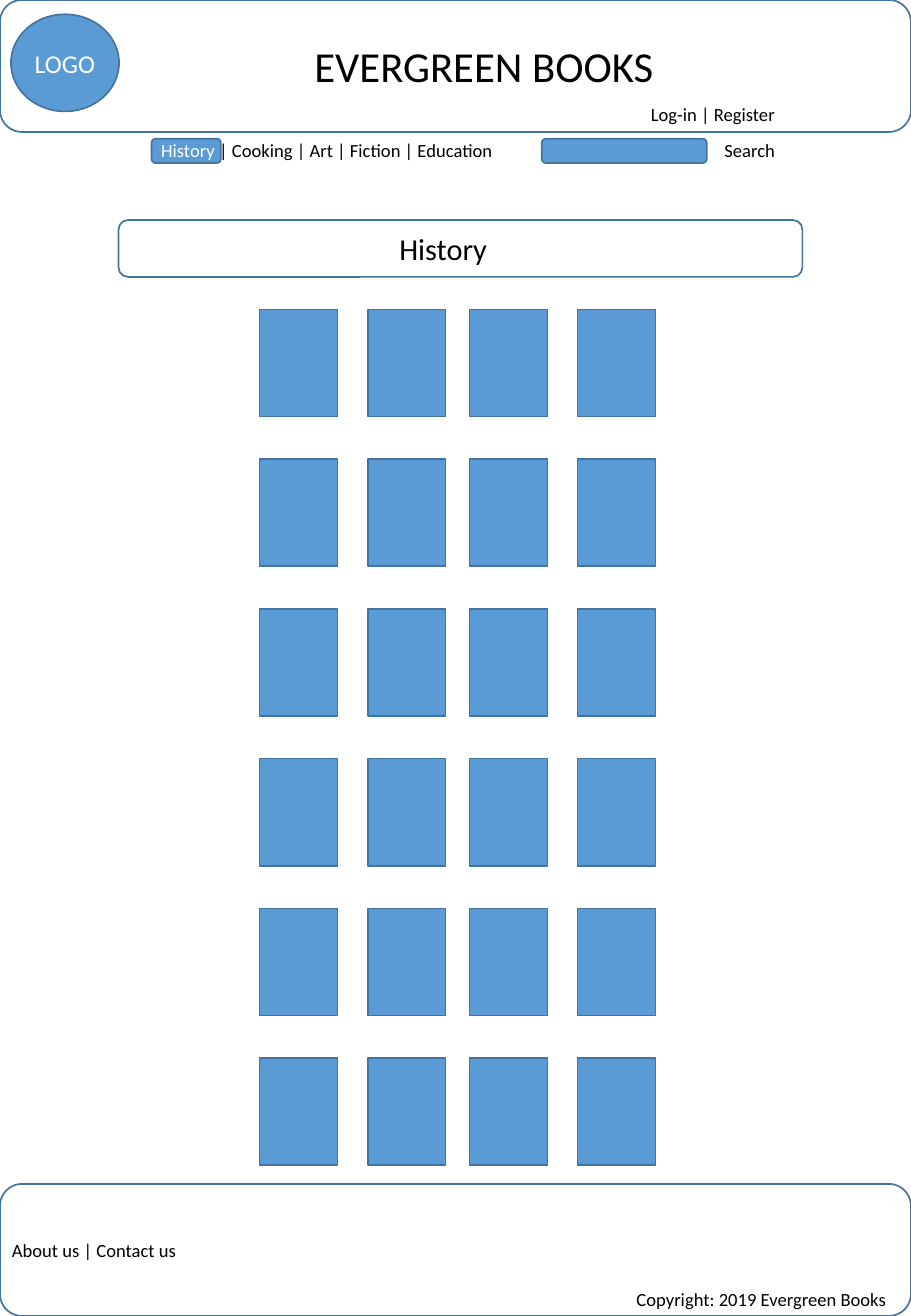
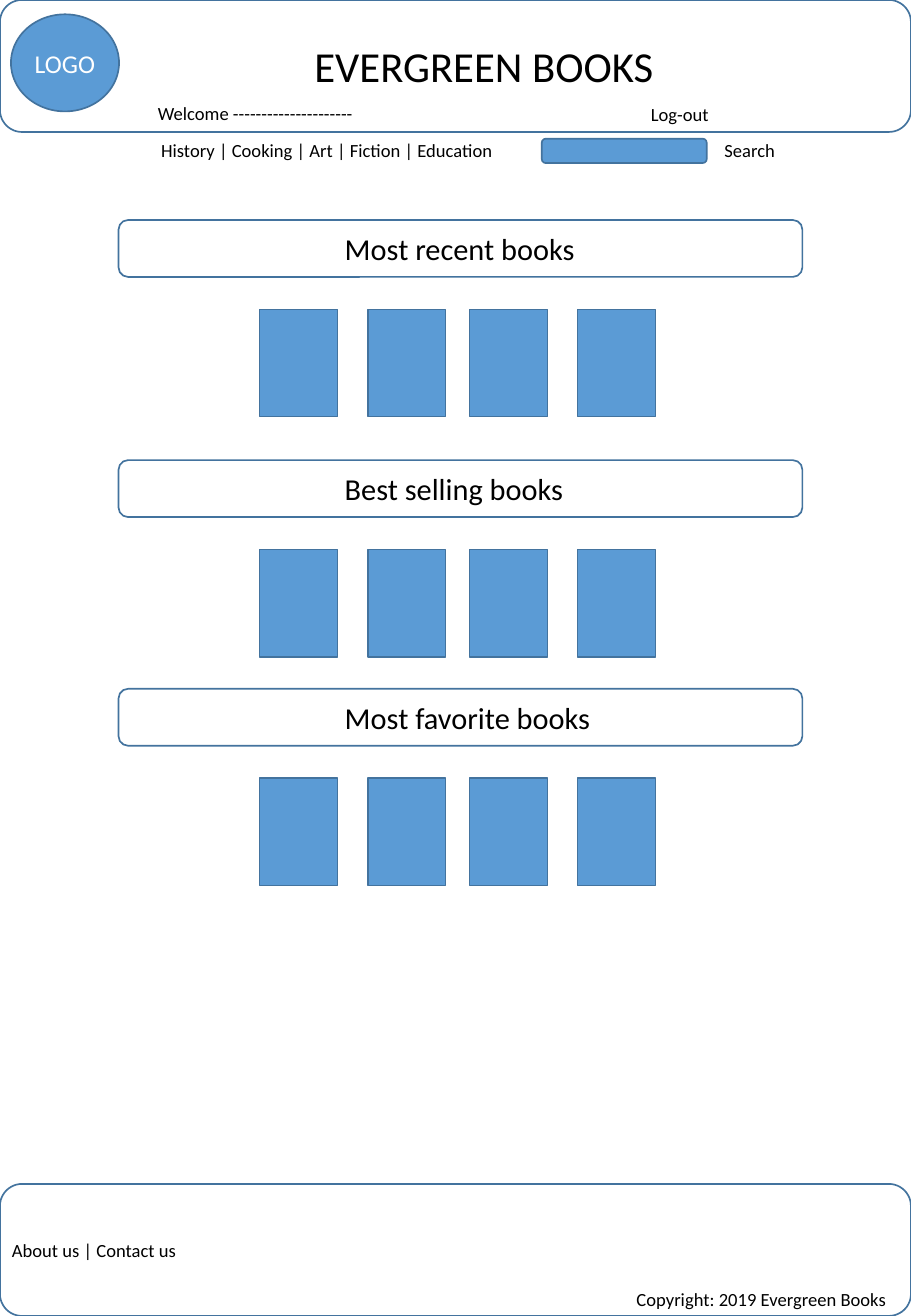
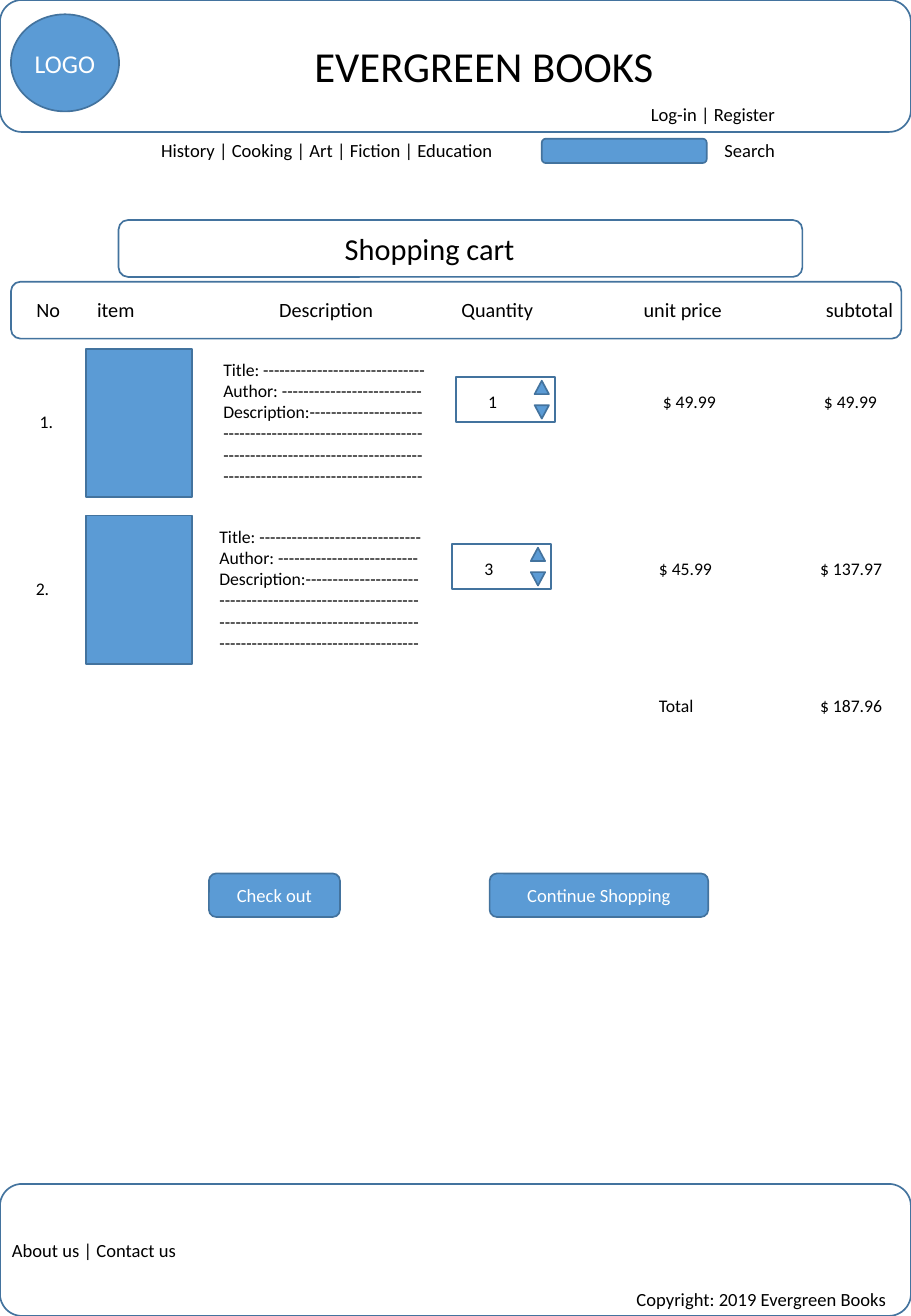
from lxml import etree
from pptx import Presentation
from pptx.dml.color import RGBColor
from pptx.enum.shapes import MSO_SHAPE as SHAPE
from pptx.enum.text import MSO_ANCHOR as ANCHOR, MSO_AUTO_SIZE as AUTO, PP_ALIGN as ALIGN
from pptx.oxml.ns import qn
from pptx.util import Cm, Pt

COLORS = {"blue": "5B9BD5", "edge": "43739E", "black": "000000", "white": "FFFFFF"}
FONT = "Calibri"
WIDTH, HEIGHT = 19.05, 27.51
BAND_H = 2.76

LABEL = {"word_wrap": False, "auto_size": AUTO.SHAPE_TO_FIT_TEXT, "vertical_anchor": ANCHOR.TOP}
BUTTON = {"word_wrap": True, "vertical_anchor": ANCHOR.MIDDLE,
          "margin_left": Cm(0.1), "margin_right": Cm(0.1),
          "margin_top": Cm(0.05), "margin_bottom": Cm(0.05)}

CATEGORIES = ["History", " | Cooking | Art | Fiction | Education"]
COVER_X = [5.43, 7.69, 9.82, 12.08]
COVER_PITCH = 3.13
HEADING_TO_COVERS = 1.87

CART_COLUMNS = ["No", "item", "Description", "Quantity", "unit price", "subtotal"]
CART_TABS = [1.27, 5.08, 8.89, 12.7, 16.51]
CART_TOP, CART_PITCH = 7.29, 3.49
CART_ITEMS = [
    {"no": "1.", "shift": 0, "quantity": "1", "price": "$ 49.99", "subtotal": "$ 49.99", "w": 1.65},
    {"no": "2.", "shift": -0.08, "quantity": "3", "price": "$ 45.99", "subtotal": "$ 137.97", "w": 1.83},
]
BOOK_LINES = [
    "Title: ------------------------------",
    "Author: --------------------------",
    "Description:---------------------",
] + ["-------------------------------------"] * 3


def apply(target, values):
    for name, value in values.items():
        setattr(target, name, value)


def place(sp, x, y, w, h):
    apply(sp, {"left": Cm(x), "top": Cm(y), "width": Cm(w), "height": Cm(h)})


def add_run(p, text, size, color):
    r = p.add_run()
    r.text = text
    apply(r.font, {"name": FONT, "size": Pt(size)})
    r.font.color.rgb = RGBColor.from_string(COLORS[color])


def write(tf, lines, size, color="black", align=ALIGN.LEFT):
    for i, line in enumerate(lines):
        p = tf.add_paragraph() if i else tf.paragraphs[0]
        p.alignment = align
        add_run(p, line, size, color)


def add_label(s, x, y, w, h, lines, size):
    sp = s.shapes.add_textbox(Cm(x), Cm(y), Cm(w), Cm(h))
    apply(sp.text_frame, LABEL)
    write(sp.text_frame, lines, size)
    return sp


def add_box(s, kind, x, y, w, h, filled=True):
    sp = s.shapes.add_shape(kind, Cm(x), Cm(y), Cm(w), Cm(h))
    sp.shadow.inherit = False
    if filled:
        sp.fill.solid()
        sp.fill.fore_color.rgb = RGBColor.from_string(COLORS["blue"])
    else:
        sp.fill.background()
    sp.line.color.rgb = RGBColor.from_string(COLORS["edge"])
    sp.line.width = Pt(1)
    return sp


def add_button(s, kind, x, y, w, h, text, size):
    tf = add_box(s, kind, x, y, w, h).text_frame
    apply(tf, BUTTON)
    write(tf, [text], size, "white", ALIGN.CENTER)


def add_title(s, text):
    sp = s.shapes.title
    place(sp, 6.32, 0.71, 7.67, 1.35)
    apply(sp.text_frame, LABEL)
    write(sp.text_frame, [text], 25.3)


def add_navigation(s, selected):
    if selected:
        add_box(s, SHAPE.ROUNDED_RECTANGLE, 3.17, 2.9, 1.45, 0.51)
    sp = s.shapes.add_textbox(Cm(3.12), Cm(2.77), Cm(7.82), Cm(0.74))
    apply(sp.text_frame, LABEL)
    first, rest = CATEGORIES
    p = sp.text_frame.paragraphs[0]
    add_run(p, first, 11, "white" if selected else "black")
    add_run(p, rest, 11, "black")
    add_box(s, SHAPE.ROUNDED_RECTANGLE, 11.33, 2.9, 3.45, 0.51)
    add_label(s, 14.9, 2.79, 1.59, 0.74, ["Search"], 11)


def add_page(prs, account="Log-in | Register", account_w=3.12, selected=False):
    s = prs.slides.add_slide(prs.slide_layouts[5])
    for y in (0, HEIGHT - BAND_H):
        add_box(s, SHAPE.ROUNDED_RECTANGLE, 0, y, WIDTH, BAND_H, filled=False)
    add_button(s, SHAPE.OVAL, 0.23, 0.3, 2.26, 2.03, "LOGO", 15.2)
    add_title(s, "EVERGREEN BOOKS")
    add_label(s, 13.36, 2.03, account_w, 0.74, [account], 11)
    add_navigation(s, selected)
    add_label(s, 13.06, 26.8, 5.79, 0.74, ["Copyright: 2019 Evergreen Books"], 11)
    add_label(s, 0, 25.78, 3.96, 0.74, ["About us | Contact us"], 11)
    return s


def add_heading(s, text, w, y=4.6, x=6.96):
    add_box(s, SHAPE.ROUNDED_RECTANGLE, 2.48, y, 14.3, 1.19, filled=False)
    add_label(s, x, y + 0.09, w, 1.02, [text], 18)


def add_covers(s, y):
    for x in COVER_X:
        add_box(s, SHAPE.RECTANGLE, x, y, 1.63, 2.24)


def add_cart_header(s):
    add_box(s, SHAPE.ROUNDED_RECTANGLE, 0.23, 5.89, 18.62, 1.19, filled=False)
    sp = add_label(s, 0.51, 6.1, 18.59, 0.76, ["\t".join(CART_COLUMNS)], 12)
    pPr = sp.text_frame.paragraphs[0]._p.get_or_add_pPr()
    tabs = etree.SubElement(pPr, qn("a:tabLst"))
    for pos in CART_TABS:
        etree.SubElement(tabs, qn("a:tab"), pos=str(Cm(pos)), algn="l")


def add_quantity(s, x, y, quantity):
    add_box(s, SHAPE.RECTANGLE, x, y, 2.08, 0.94, filled=False)
    for dy, rotation in ((0.08, 0), (0.59, 180)):
        arrow = add_box(s, SHAPE.ISOSCELES_TRIANGLE, x + 1.65, y + dy, 0.3, 0.28)
        arrow.rotation = rotation
    add_label(s, x + 0.43, y + 0.16, 0.71, 0.71, [quantity], 10.5)


def add_cart_item(s, y, item):
    dx = item["shift"]
    add_box(s, SHAPE.RECTANGLE, 1.8, y, 2.21, 3.1)
    add_label(s, 0.58 + dx, y + 1.18, 0.8, 0.71, [item["no"]], 10.5)
    add_label(s, 4.42 + dx, y + 0.08, 4.83, 2.95, BOOK_LINES, 10.5)
    add_quantity(s, 9.53 + dx, y + 0.59, item["quantity"])
    add_label(s, 13.61 + dx, y + 0.75, 1.65, 0.71, [item["price"]], 10.5)
    add_label(s, 16.98 + dx, y + 0.75, item["w"], 0.71, [item["subtotal"]], 10.5)


def build_category(prs):
    s = add_page(prs, selected=True)
    add_heading(s, "History", 2.36, x=8.1)
    for row in range(6):
        add_covers(s, 4.6 + HEADING_TO_COVERS + row * COVER_PITCH)


def build_home(prs):
    s = add_page(prs, "Log-out", 1.8)
    add_label(s, 3.05, 2.01, 4.65, 0.74, ["Welcome ---------------------"], 11)
    for text, w, y in (("Most recent books", 5.36, 4.6),
                       ("Best selling books", 5.13, 9.62),
                       ("Most favorite books", 5.69, 14.4)):
        add_heading(s, text, w, y)
        add_covers(s, y + HEADING_TO_COVERS)


def build_cart(prs):
    s = add_page(prs)
    add_heading(s, "Shopping cart", 4.11)
    add_cart_header(s)
    for i, item in enumerate(CART_ITEMS):
        add_cart_item(s, CART_TOP + i * CART_PITCH, item)
    add_label(s, 13.53, 14.4, 1.27, 0.71, ["Total"], 10.5)
    add_label(s, 16.9, 14.4, 1.83, 0.71, ["$ 187.96"], 10.5)
    for x, w, text in ((4.37, 2.74, "Check out"), (10.24, 4.57, "Continue Shopping")):
        add_button(s, SHAPE.ROUNDED_RECTANGLE, x, 18.26, w, 0.91, text, 11)


def main():
    prs = Presentation()
    apply(prs, {"slide_width": Cm(WIDTH), "slide_height": Cm(HEIGHT)})
    build_category(prs)
    build_home(prs)
    build_cart(prs)
    prs.save("out.pptx")


if __name__ == "__main__":
    main()
